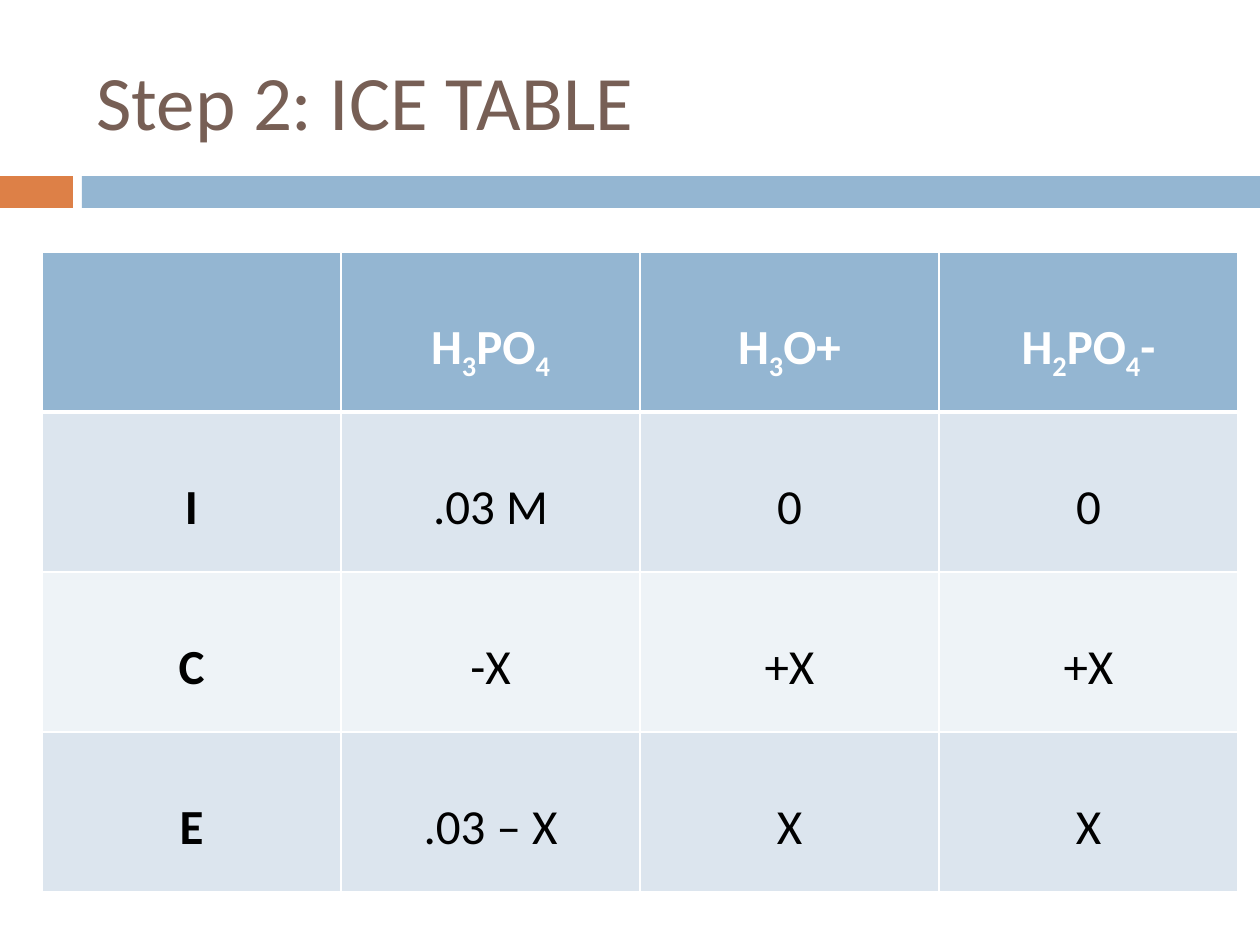
from itertools import groupby

from lxml import etree
from pptx import Presentation
from pptx import util as u
from pptx.dml.color import RGBColor
from pptx.enum import shapes, text
from pptx.oxml.ns import qn

PX = 914400 // 126
FONT = "Calibri"
WHITE = RGBColor(0xFF, 0xFF, 0xFF)
BLACK = RGBColor(0, 0, 0)
BROWN = RGBColor(0x77, 0x5F, 0x55)
ORANGE = RGBColor(0xDD, 0x80, 0x47)
BLUE = RGBColor(0x94, 0xB6, 0xD2)
BAND_DARK = RGBColor(0xDC, 0xE5, 0xEE)
BAND_LIGHT = RGBColor(0xEE, 0xF3, 0xF7)

ICE_ROWS = [
    ["", "H3PO4", "H3O+", "H2PO4-"],
    ["I", ".03 M", "0", "0"],
    ["C", "-X", "+X", "+X"],
    ["E", ".03 – X", "X", "X"],
]


def write(frame, words, size, color, bold=False, align=text.PP_ALIGN.LEFT, formula=False):
    """Fill a text frame; in a formula the digits become subscripts."""
    paragraph = frame.paragraphs[0]
    paragraph.alignment = align
    parts = groupby(words, key=lambda letter: formula and letter.isdigit())
    for subscript, letters in parts:
        run = paragraph.add_run()
        run.text = "".join(letters)
        font = run.font
        font.name, font.size, font.bold = FONT, u.Pt(size), bold
        font.color.rgb = color
        if subscript:
            run._r.get_or_add_rPr().set("baseline", "-25000")


def add_borders(cell, color, **widths):
    """Draw cell sides, given as L, R, T, B widths in points."""
    properties = cell._tc.get_or_add_tcPr()
    for side, width in widths.items():
        line = etree.SubElement(properties, qn(f"a:ln{side}"), w=str(u.Pt(width)))
        fill = etree.SubElement(line, qn("a:solidFill"))
        etree.SubElement(fill, qn("a:srgbClr"), val=str(color))


class SlideBuilder:
    def __init__(self, presentation):
        self.slide = presentation.slides.add_slide(presentation.slide_layouts[5])

    def bar(self, left, top, width, height, color):
        shape = self.slide.shapes.add_shape(
            shapes.MSO_SHAPE.RECTANGLE, *(PX * n for n in (left, top, width, height)))
        shape.shadow.inherit = False
        shape.fill.solid()
        shape.fill.fore_color.rgb = color
        shape.line.fill.background()

    def title(self, words, left, top, width, height):
        title = self.slide.shapes.title
        title.left, title.top, title.width, title.height = (
            PX * n for n in (left, top, width, height))
        title.text_frame.vertical_anchor = text.MSO_ANCHOR.MIDDLE
        write(title.text_frame, words, 44, BROWN)

    def table(self, rows, left, top, column_width, row_height):
        columns = len(rows[0])
        table = self.slide.shapes.add_table(
            len(rows), columns, PX * left, PX * top,
            PX * column_width * columns, PX * row_height * len(rows)).table
        for column in table.columns:
            column.width = PX * column_width
        for row_index, row in enumerate(rows):
            table.rows[row_index].height = PX * row_height
            for column_index, words in enumerate(row):
                self.cell(table.cell(row_index, column_index), words, row_index, column_index)

    def cell(self, cell, words, row, column):
        header = row == 0
        add_borders(cell, WHITE, L=1, R=1, T=3 if row == 1 else 1, B=3 if header else 1)
        cell.fill.solid()
        cell.fill.fore_color.rgb = BLUE if header else BAND_DARK if row % 2 else BAND_LIGHT
        cell.margin_top = PX * 66
        write(cell.text_frame, words, 28, WHITE if header else BLACK,
              bold=header or column == 0, align=text.PP_ALIGN.CENTER, formula=header)


def main():
    presentation = Presentation()
    presentation.slide_width, presentation.slide_height = u.Inches(10), u.Inches(7.5)
    builder = SlideBuilder(presentation)
    builder.bar(0, 176, 73, 32, ORANGE)
    builder.bar(82, 176, 1178, 32, BLUE)
    builder.title("Step 2: ICE TABLE", 84, 32, 1124, 136)
    builder.table(ICE_ROWS, 42, 252, 299, 160)
    presentation.save("out.pptx")


if __name__ == "__main__":
    main()
